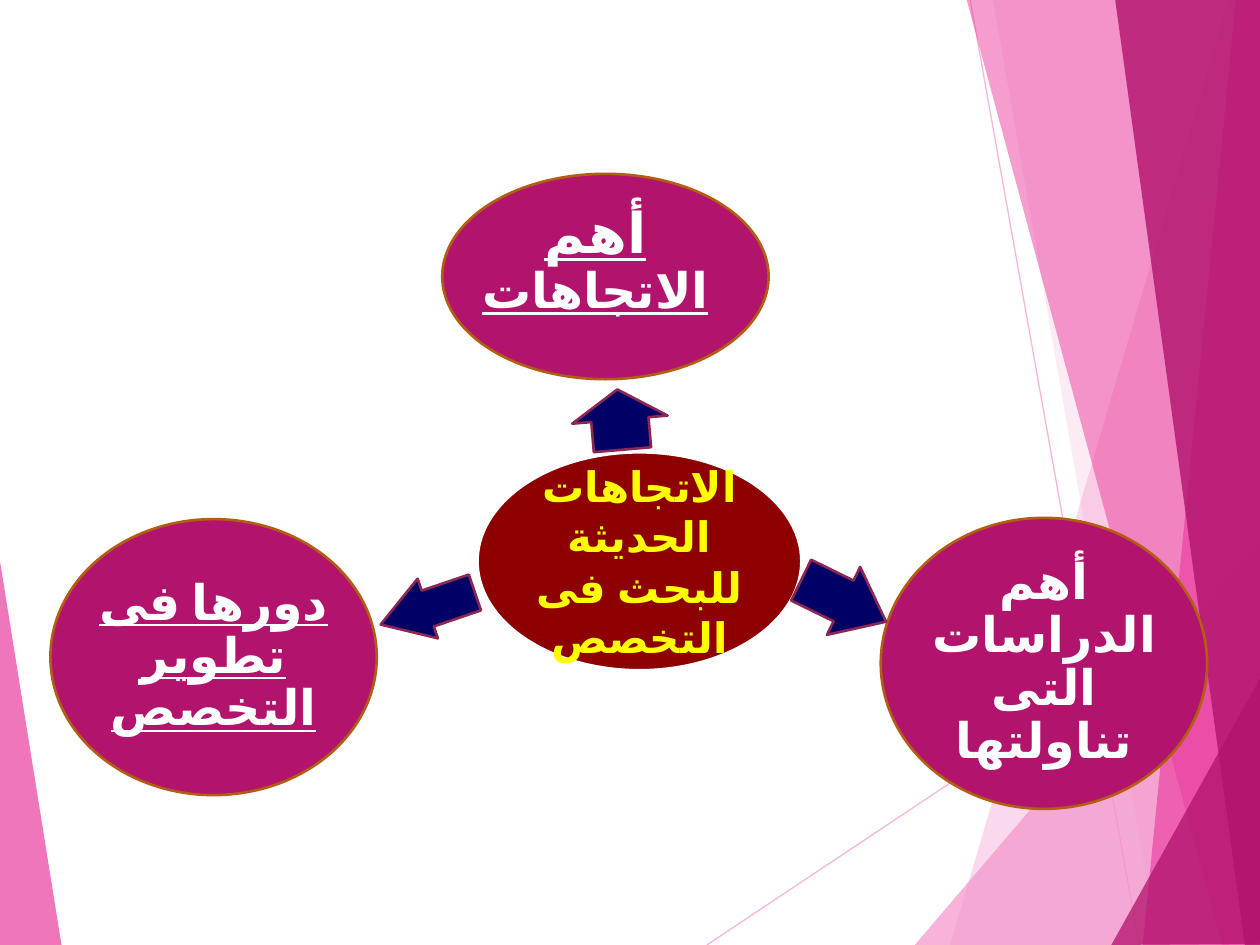
import pptx
import pptx.util
import pptx.dml.color
import pptx.enum.shapes
import pptx.enum.text
import pptx.oxml
import pptx.oxml.ns

Inch, Pt = pptx.util.Inches, pptx.util.Pt
Kind = pptx.enum.shapes.MSO_SHAPE
qn = pptx.oxml.ns.qn

WIDE, HIGH = 10, 7.5
PINK, ROSE, PLUM = "F496CB", "EB3D9F", "B2136D"
RAYS = [((5.61, 7.5), (10.01, 4.57)), ((7.7, 0), (9.04, 7.5))]
# Corner points are in hundredths of an inch.
SHARDS = [
    (PINK, 36, [(975, 0), (754, 750), (1002, 751), (1001, 1)]),
    (PINK, 20, [(788, -1), (919, 750), (1001, 750), (1001, -1)]),
    (PINK, 72, [(726, 750), (1000, 429), (1001, 750)]),
    (ROSE, 50, [(767, -1), (970, 750), (1001, 749), (1001, -1)]),
    (ROSE, 66, [(981, -1), (907, 750), (1001, 750), (1000, -1)]),
    (PLUM, 80, [(885, -1), (988, 750), (1002, 750), (1000, -1)]),
    (PLUM, 76, [(882, 750), (1002, 535), (1002, 749)]),
    (ROSE, 70, [(-1, 439), (49, 751), (-1, 750)]),
]
HEAD = {"name": "Cabin", "size": Pt(28), "bold": True}
LINED = {**HEAD, "underline": True}
CORE = {"name": "Arial", "size": Pt(24), "bold": True}
OVALS = [
    ((3.51, 1.38, 2.59, 1.63), PLUM, "B35D12", None),
    ((3.79, 3.59, 2.57, 1.73), "8E0000", "FFFFFF",
     ("الاتجاهات الحديثة للبحث فى التخصص", CORE, "FFFF00", 1)),
    ((6.99, 4.11, 2.59, 2.31), PLUM, "B35D12",
     ("أهم الدراسات التى تناولتها", HEAD, "FFFFFF", 0.9)),
    ((0.4, 4.12, 2.59, 2.19), PLUM, "B35D12",
     ("دورها فى تطوير التخصص", LINED, "FFFFFF", 0.9)),
]
TOP = (3.69, 1.58, 2.07, 1.01)
TITLE = [("أهم ", {**LINED, "size": Pt(32)}), ("الاتجاهات", LINED)]
ARROWS = [
    (Kind.RIGHT_ARROW, (4.68, 2.95, 0.48, 0.76), 265.1),
    (Kind.RIGHT_ARROW, (6.32, 4.47, 0.75, 0.6), 26.1),
    (Kind.LEFT_ARROW, (3, 4.58, 0.79, 0.5), 341.2),
]


def tint(ink, code, alpha=100):
    ink.rgb = pptx.dml.color.RGBColor.from_string(code)
    if alpha < 100:
        node = ink._xFill.find(qn("a:srgbClr"))
        node.append(node.makeelement(qn("a:alpha"), {"val": str(alpha * 1000)}))


def paint(shape, fill, line=None, alpha=100):
    shape.shadow.inherit = False
    shape.fill.solid()
    tint(shape.fill.fore_color, fill, alpha)
    if line:
        shape.line.fill.solid()
        tint(shape.line.fill.fore_color, line)
        shape.line.width = Pt(1.5)
    else:
        shape.line.fill.background()


def write(frame, runs, code, space, anchor, glow=False):
    frame.word_wrap = True
    frame.vertical_anchor = anchor
    para = frame.paragraphs[0]
    para.alignment = pptx.enum.text.PP_ALIGN.CENTER
    para.line_spacing = space
    para._p.get_or_add_pPr().set("rtl", "1")
    for text, form in runs:
        run = para.add_run()
        run.text = text
        for key, value in form.items():
            setattr(run.font, key, value)
        tint(run.font.color, code)
        props = run._r.get_or_add_rPr()
        props.set("lang", "ar-EG")
        latin = props.find(qn("a:latin"))
        latin.addnext(props.makeelement(qn("a:cs"), {"typeface": form["name"]}))
        if glow:
            latin.addprevious(pptx.oxml.parse_xml(
                f'<a:effectLst {pptx.oxml.ns.nsdecls("a")}>'
                '<a:outerShdw blurRad="38100" dist="38100" dir="2700000">'
                '<a:srgbClr val="000000"><a:alpha val="43000"/></a:srgbClr>'
                '</a:outerShdw></a:effectLst>'))


def backdrop(shapes):
    for start, end in RAYS:
        ray = shapes.add_connector(pptx.enum.shapes.MSO_CONNECTOR.STRAIGHT,
                                   *map(Inch, start + end))
        ray.line.width = Pt(0.75)
        ray.line.fill.solid()
        tint(ray.line.fill.fore_color, PINK, 70)
        props = ray._element.spPr
        props.append(props.makeelement(qn("a:effectLst"), {}))
    for code, alpha, points in SHARDS:
        pen = shapes.build_freeform(*points[0], scale=Inch(0.01))
        pen.add_line_segments(points[1:], close=True)
        paint(pen.convert_to_shape(), code, alpha=alpha)


def diagram(shapes):
    anchor = pptx.enum.text.MSO_ANCHOR
    for box, fill, line, label in OVALS:
        oval = shapes.add_shape(Kind.OVAL, *map(Inch, box))
        paint(oval, fill, line)
        if label:
            text, form, code, space = label
            frame = oval.text_frame
            for side in ("left", "top", "right", "bottom"):
                setattr(frame, f"margin_{side}", 0)
            write(frame, [(text, form)], code, space, anchor.MIDDLE)
    title = shapes.add_textbox(*map(Inch, TOP))
    write(title.text_frame, TITLE, "FFFFFF", 0.9, anchor.TOP, glow=True)
    for kind, box, turn in ARROWS:
        arrow = shapes.add_shape(kind, *map(Inch, box))
        arrow.rotation = turn
        arrow.adjustments[0] = 0.6
        arrow.adjustments[1] = 0.5 * box[2] / min(box[2:])
        paint(arrow, "000066", "8B2752")


def main():
    """Build the slide of three ovals around a central topic."""
    deck = pptx.Presentation()
    deck.slide_width, deck.slide_height = Inch(WIDE), Inch(HIGH)
    slide = deck.slides.add_slide(deck.slide_layouts[6])
    backdrop(slide.shapes)
    diagram(slide.shapes)
    deck.save("out.pptx")


if __name__ == "__main__":
    main()
